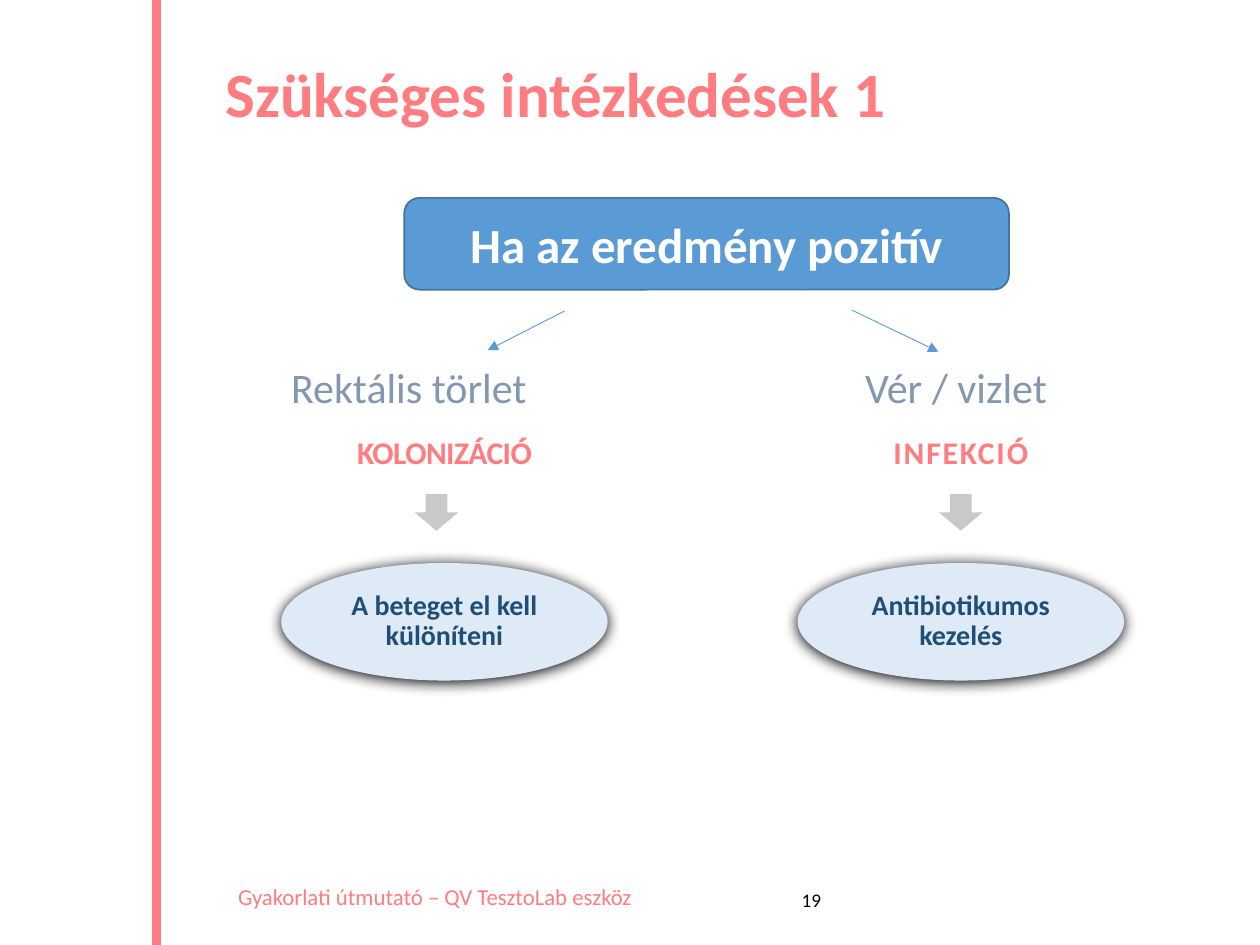
from lxml.etree import SubElement
from pptx import Presentation
from pptx.dml.color import RGBColor
from pptx.enum.shapes import MSO_CONNECTOR, MSO_SHAPE
from pptx.enum.text import MSO_ANCHOR, MSO_AUTO_SIZE, PP_ALIGN
from pptx.oxml.ns import qn
from pptx.util import Cm, Pt

COLORS = {
    "coral": "FF7C80",
    "blue": "5B9BD5",
    "outline": "43739E",
    "slate": "8497B0",
    "pale": "DEEBF7",
    "navy": "1F4E79",
    "gray": "C9C9C9",
    "white": "FFFFFF",
    "black": "000000",
}


def rgb(name):
    return RGBColor.from_string(COLORS[name])


def place(sp, left, top, width, height):
    sp.left, sp.top, sp.width, sp.height = map(Cm, (left, top, width, height))


def write(sp, text, size, color, bold=False, align=PP_ALIGN.CENTER,
          anchor=MSO_ANCHOR.TOP, spacing=1.0, tracking=None, inset=None):
    tf = sp.text_frame
    tf.word_wrap = True
    tf.auto_size = MSO_AUTO_SIZE.NONE
    tf.vertical_anchor = anchor
    if inset is not None:
        tf.margin_left = tf.margin_right = Cm(inset)
        tf.margin_top = tf.margin_bottom = Cm(inset)
    p = tf.paragraphs[0]
    p.alignment = align
    p.line_spacing = spacing
    r = p.add_run()
    r.text = text
    r.font.name = "Calibri"
    r.font.size = Pt(size)
    r.font.bold = bold
    r.font.color.rgb = rgb(color)
    if tracking:
        r.font._element.set("spc", str(tracking))


def add_text(s, box, text, size, color, **style):
    sp = s.shapes.add_textbox(*map(Cm, box))
    write(sp, text, size, color, **style)


def add_label(s, center, top, width, height, text, size, color, **style):
    add_text(s, (center - width / 2, top, width, height), text, size, color,
             anchor=MSO_ANCHOR.MIDDLE, spacing=0.9, inset=0.08, **style)


def add_block(s, kind, box, fill, line=None):
    sp = s.shapes.add_shape(kind, *map(Cm, box))
    sp.shadow.inherit = False
    sp.fill.solid()
    sp.fill.fore_color.rgb = rgb(fill)
    if line:
        sp.line.color.rgb = rgb(line)
        sp.line.width = Pt(1)
    else:
        sp.line.fill.background()
    return sp


def add_line(s, start, end, color, width, arrow=False):
    sp = s.shapes.add_connector(MSO_CONNECTOR.STRAIGHT, *map(Cm, start + end))
    sp.line.color.rgb = rgb(color)
    sp.line.width = Pt(width)
    if arrow:
        SubElement(sp.line._get_or_add_ln(), qn("a:tailEnd"), type="triangle")
    SubElement(sp._element.spPr, qn("a:effectLst"))


def add_oval(s, center, text):
    sp = add_block(s, MSO_SHAPE.OVAL, (center - 3.29, 11.35, 6.58, 2.37), "pale")
    effects = sp._element.spPr.find(qn("a:effectLst"))
    shadow = SubElement(effects, qn("a:outerShdw"), blurRad=str(Pt(8.5)),
                        dist=str(Pt(1)), dir="5400000", algn="ctr", rotWithShape="0")
    SubElement(shadow, qn("a:srgbClr"), val=COLORS["black"])
    write(sp, text, 16, "navy", bold=True, anchor=MSO_ANCHOR.MIDDLE,
          spacing=0.9, inset=0)


def add_branch(s, center, sample, sample_center, sample_width,
               finding, tracking, arrow_center, action):
    add_label(s, sample_center, 7.34, sample_width, 1.04, sample, 24, "slate")
    add_label(s, center, 8.76, 4.1, 0.8, finding, 18, "coral",
              bold=True, tracking=tracking)
    add_block(s, MSO_SHAPE.DOWN_ARROW, (arrow_center - 0.44, 9.96, 0.88, 0.74), "gray")
    add_oval(s, center, action)


def main():
    prs = Presentation()
    prs.slide_width, prs.slide_height = Cm(25.4), Cm(19.05)
    s = prs.slides.add_slide(prs.slide_layouts[5])

    add_line(s, (3.15, 19.05), (3.15, 0), "coral", 5)
    title = s.shapes.title
    place(title, 4.29, 1.14, 19.38, 2.36)
    write(title, "Szükséges intézkedések 1", 36, "coral", bold=True,
          align=PP_ALIGN.LEFT, spacing=0.9)

    result = add_block(s, MSO_SHAPE.ROUNDED_RECTANGLE, (8.15, 3.99, 12.19, 1.85),
                       "blue", "outline")
    write(result, "Ha az eredmény pozitív", 28, "white", bold=True,
          anchor=MSO_ANCHOR.MIDDLE)
    add_line(s, (11.38, 6.27), (9.83, 7.06), "blue", 0.5, arrow=True)
    add_line(s, (17.17, 6.25), (18.92, 7.09), "blue", 0.5, arrow=True)

    add_branch(s, 8.96, "Rektális törlet ", 8.34, 6.12,
               "KOLONIZÁCIÓ", -30, 8.8, "A beteget el kell különíteni")
    add_branch(s, 19.37, "Vér / vizlet ", 19.37, 8.23,
               "INFEKCIÓ", 110, 19.37, "Antibiotikumos kezelés")

    add_text(s, (4.55, 17.68, 8.89, 0.81), "Gyakorlati útmutató – QV TesztoLab eszköz",
             13, "coral", align=PP_ALIGN.LEFT)
    add_text(s, (15.8, 17.78, 1.12, 0.74), "19", 11, "black")
    prs.save("out.pptx")


if __name__ == "__main__":
    main()
